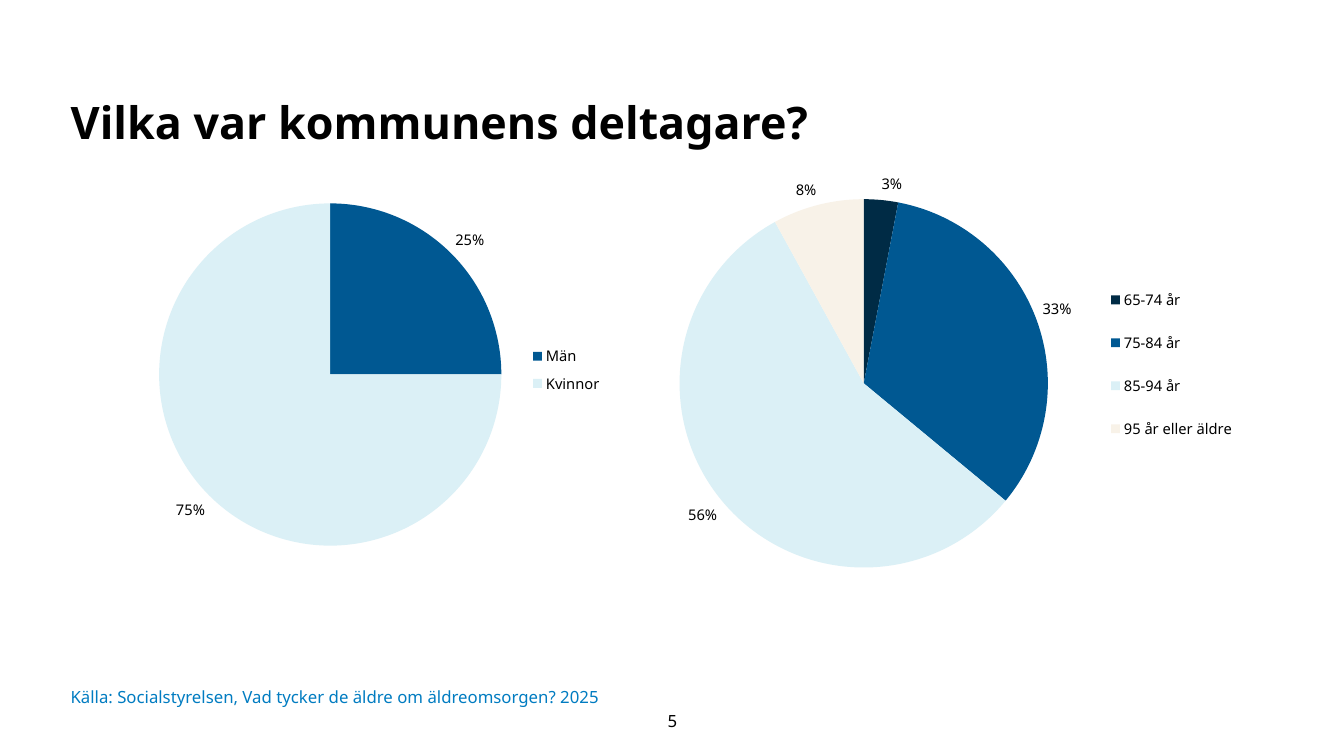
from lxml.etree import SubElement
from pptx import Presentation
from pptx.chart.data import CategoryChartData
from pptx.dml.color import RGBColor
from pptx.enum.chart import XL_CHART_TYPE as ChartType
from pptx.enum.chart import XL_LABEL_POSITION as LabelPos
from pptx.enum.chart import XL_LEGEND_POSITION as LegendPos
from pptx.enum.text import MSO_ANCHOR as Anchor
from pptx.enum.text import PP_ALIGN as Align
from pptx.oxml.ns import qn
from pptx.util import Cm, Pt

FONT = "Noto Sans"
BLACK = RGBColor(0x00, 0x00, 0x00)
NAVY = RGBColor(0x00, 0x2B, 0x45)
BLUE = RGBColor(0x00, 0x58, 0x92)
PALE = RGBColor(0xDB, 0xF0, 0xF6)
SAND = RGBColor(0xF8, 0xF2, 0xE8)
LINK = RGBColor(0x01, 0x7C, 0xC1)


class Deck:
    def __init__(self, width, height):
        self.prs = Presentation()
        self.prs.slide_width, self.prs.slide_height = Cm(width), Cm(height)
        self.slide = None

    def add_slide(self):
        self.slide = self.prs.slides.add_slide(self.prs.slide_layouts[5])

    def style(self, font, size, color=BLACK, bold=False):
        font.name, font.size, font.bold = FONT, Pt(size), bold
        font.color.rgb = color

    def fill_text(self, sp, text, size, color, align, anchor, bold=False, margin=0.0):
        tf = sp.text_frame
        tf.word_wrap, tf.vertical_anchor = True, anchor
        tf.margin_left = tf.margin_right = Cm(margin)
        tf.margin_top = tf.margin_bottom = Cm(0)
        p = tf.paragraphs[0]
        p.text, p.alignment = text, align
        self.style(p.font, size, color, bold)
        return p

    def title(self, text, box):
        sp = self.slide.shapes.title
        sp.left, sp.top, sp.width, sp.height = map(Cm, box)
        p = self.fill_text(sp, text, 32, BLACK, Align.LEFT, Anchor.TOP, bold=True)
        p.line_spacing = 1.1

    def text(self, text, box, color=BLACK, align=Align.LEFT):
        sp = self.slide.shapes.add_textbox(*map(Cm, box))
        self.fill_text(sp, text, 12, color, align, Anchor.MIDDLE)

    def place(self, layout, box, inner=False):
        manual = SubElement(layout, qn("c:manualLayout"))
        if inner:
            SubElement(manual, qn("c:layoutTarget")).set("val", "inner")
        for tag in ("xMode", "yMode"):
            SubElement(manual, qn(f"c:{tag}")).set("val", "edge")
        for tag, value in zip("xywh", box):
            SubElement(manual, qn(f"c:{tag}")).set("val", str(value))

    def pie(self, box, shares, plot_box, legend_box):
        data = CategoryChartData()
        data.categories = [name for name, _, _ in shares]
        data.add_series("Series 1", [value for _, value, _ in shares])
        chart = self.slide.shapes.add_chart(ChartType.PIE, *map(Cm, box), data).chart
        chart.has_title = False
        self.style(chart.font, 10)

        plot = chart.plots[0]
        plot.vary_by_categories = True
        for i, (_, _, color) in enumerate(shares):
            fill = plot.series[0].points[i].format.fill
            fill.solid()
            fill.fore_color.rgb = color
        plot.has_data_labels = True
        labels = plot.data_labels
        labels.show_percentage, labels.show_value = True, False
        labels.number_format, labels.number_format_is_linked = "0%", False
        labels.position = LabelPos.OUTSIDE_END
        self.style(labels.font, 10.5)

        chart.has_legend = True
        legend = chart.legend
        legend.position, legend.include_in_layout = LegendPos.RIGHT, False
        self.style(legend.font, 10.5)

        area = chart._chartSpace.find(".//" + qn("c:plotArea"))
        for old in area.findall(qn("c:layout")):
            area.remove(old)
        layout = SubElement(area, qn("c:layout"))
        area.insert(0, layout)
        self.place(layout, plot_box, inner=True)
        node = legend._element
        for old in node.findall(qn("c:layout")):
            node.remove(old)
        layout = SubElement(node, qn("c:layout"))
        node.find(qn("c:legendPos")).addnext(layout)
        self.place(layout, legend_box)


def main():
    deck = Deck(33.87, 19.05)
    deck.add_slide()
    deck.title("Vilka var kommunens deltagare?", (1.78, 2.24, 27, 1.35))
    deck.pie(
        (0.56, 3.28, 17.25, 11.96),
        [("Män", 25, BLUE), ("Kvinnor", 75, PALE)],
        (0.2, 0.12, 0.5, 0.79),
        (0.73, 0.44, 0.13, 0.13),
    )
    deck.pie(
        (15.04, 4.06, 17.25, 10.67),
        [
            ("65-74 år", 3, NAVY),
            ("75-84 år", 33, BLUE),
            ("85-94 år", 56, PALE),
            ("95 år eller äldre", 8, SAND),
        ],
        (0.12, 0.09, 0.54, 0.87),
        (0.73, 0.25, 0.22, 0.46),
    )
    deck.text(
        "Källa: Socialstyrelsen, Vad tycker de äldre om äldreomsorgen? 2025",
        (1.78, 17.15, 14.12, 0.81),
        color=LINK,
    )
    deck.text("5", (15.65, 17.65, 2.59, 1.02), align=Align.CENTER)
    deck.prs.save("out.pptx")


if __name__ == "__main__":
    main()
